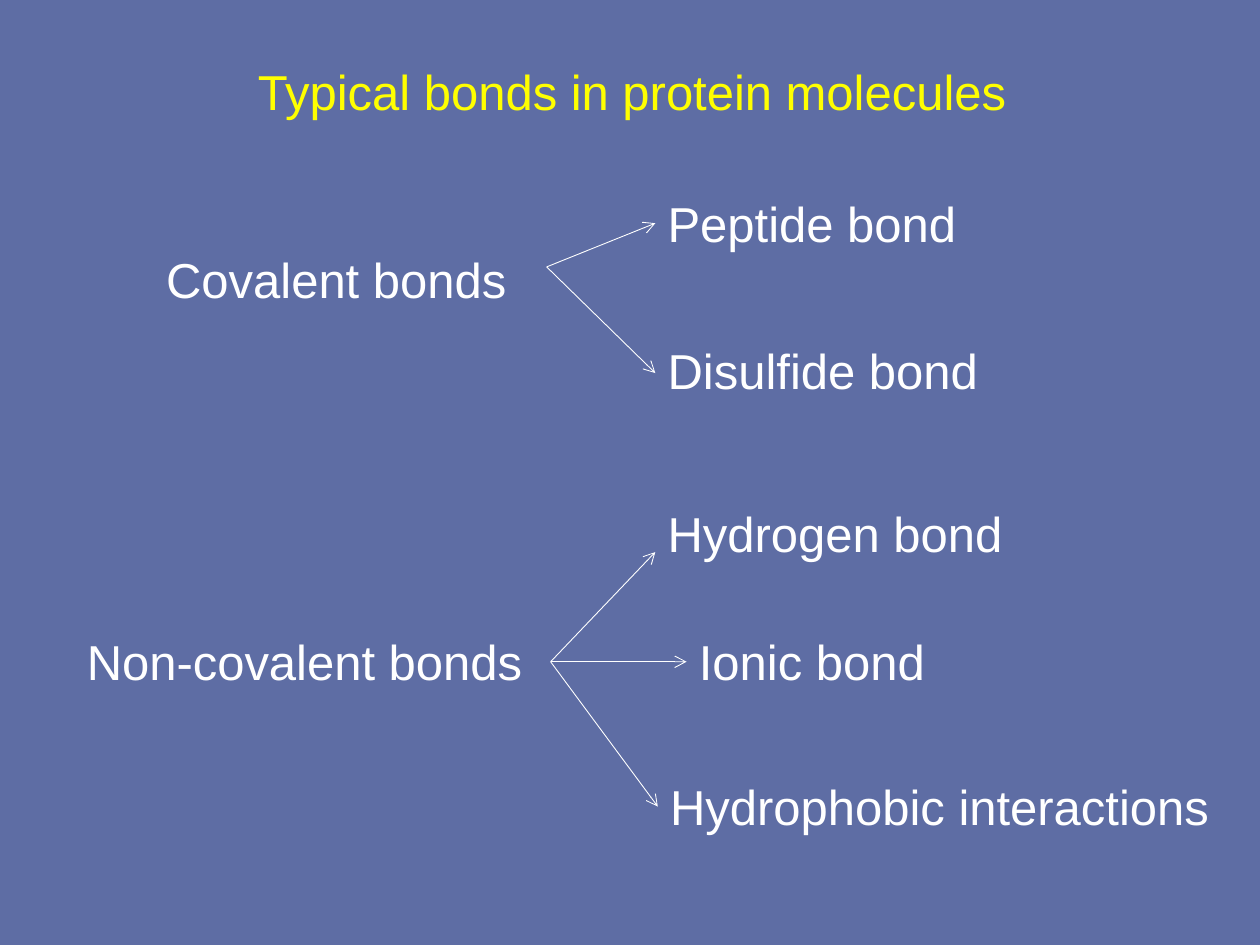
from collections import namedtuple

from lxml import etree
from pptx import Presentation
from pptx.dml.color import RGBColor
from pptx.enum.shapes import MSO_CONNECTOR
from pptx.enum.text import MSO_AUTO_SIZE
from pptx.oxml.ns import qn
from pptx.util import Cm, Pt

STRAIGHT = MSO_CONNECTOR.STRAIGHT
FIT_SHAPE = MSO_AUTO_SIZE.SHAPE_TO_FIT_TEXT
SLATE = RGBColor(0x5E, 0x6D, 0xA4)
YELLOW = RGBColor(0xFF, 0xFF, 0x00)
WHITE = RGBColor(0xFF, 0xFF, 0xFF)
LINE_HEIGHT = 1.45

Box = namedtuple("Box", "left top width")
Branch = namedtuple("Branch", "text left top width tip")


def add_label(page, box, text, color=WHITE):
    """Place one line of text in a box given in centimetres."""
    label = page.shapes.add_textbox(
        Cm(box.left), Cm(box.top), Cm(box.width), Cm(LINE_HEIGHT))
    frame = label.text_frame
    frame.word_wrap = False
    frame.auto_size = FIT_SHAPE
    para = frame.paragraphs[0]
    para.text = text
    para.font.name = "Arial"
    para.font.size = Pt(28)
    para.font.color.rgb = color


def add_arrow(page, start, end):
    """Draw a thin white arrow between two points in centimetres."""
    arrow = page.shapes.add_connector(
        STRAIGHT, *(Cm(value) for value in start + end))
    arrow.line.color.rgb = WHITE
    arrow.line.width = Pt(0.5)
    etree.SubElement(arrow.line._get_or_add_ln(), qn("a:tailEnd"), type="arrow")
    etree.SubElement(arrow._element.spPr, qn("a:effectLst"))


def add_bond_family(page, box, name, name_top, fork, branches):
    """Place a bond family and its branches, with offsets from the box."""
    add_label(page, Box(box.left, box.top + name_top, box.width), name)
    start = (box.left + fork[0], box.top + fork[1])
    for branch in branches:
        left = box.left + branch.left
        add_label(page, Box(left, box.top + branch.top, branch.width), branch.text)
        add_arrow(page, start, (left, box.top + branch.tip))


def main():
    """Build the slide and save it."""
    deck = Presentation()
    deck.slide_width, deck.slide_height = Cm(25.4), Cm(19.05)
    page = deck.slides.add_slide(deck.slide_layouts[6])
    page.background.fill.solid()
    page.background.fill.fore_color.rgb = SLATE

    add_label(page, Box(4.95, 1.12, 15.8), "Typical bonds in protein molecules", YELLOW)
    add_bond_family(page, Box(3.1, 3.78, 7.62), "Covalent bonds", 1.12, (7.92, 1.6), [
        Branch("Peptide bond", 10.11, 0, 6.55, 0.72),
        Branch("Disulfide bond", 10.11, 2.95, 7.24, 3.74),
    ])
    add_bond_family(page, Box(1.5, 10.03, 9.6), "Non-covalent bonds", 2.57, (9.6, 3.31), [
        Branch("Hydrogen bond", 11.71, 0, 7.54, 1.1),
        Branch("Ionic bond", 12.34, 2.57, 5.31, 3.31),
        Branch("Hydrophobic interactions", 11.76, 5.49, 12.01, 6.23),
    ])
    deck.save("out.pptx")


if __name__ == "__main__":
    main()
